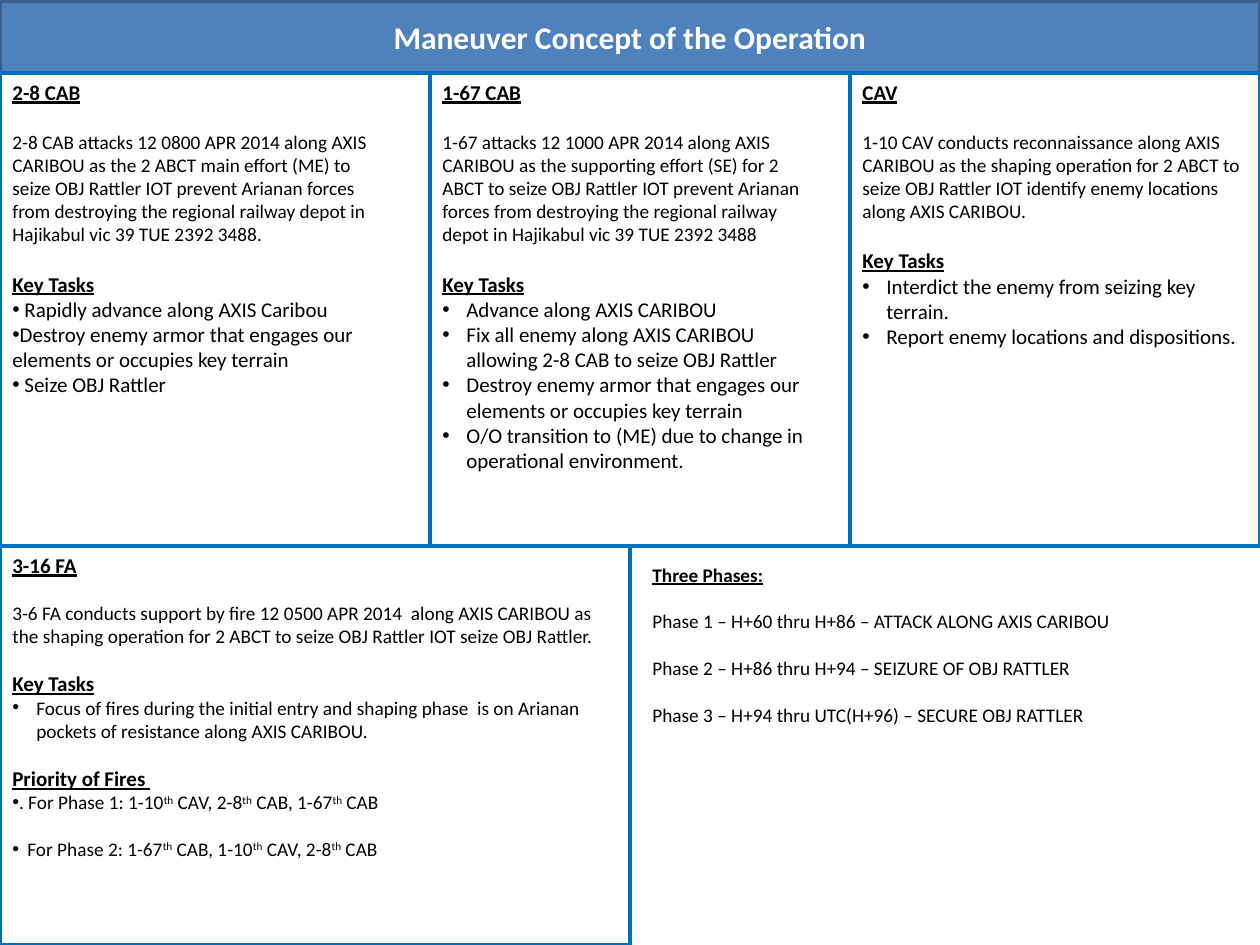
"""Build the maneuver concept slide: a title bar over five unit panels."""
from pptx import Presentation, util as u
from pptx.dml.color import RGBColor
from pptx.enum import shapes, text
from pptx.oxml.ns import qn
from lxml import etree

PX = 914400 / 126
WIDE, HIGH = 1260, 945
TOP, MID = 73, 546

THEME = {
    "font": "Calibri", "bar": "4F81BD", "edge": "3A5F8C", "rule": "0070C0",
    "ink": "000000", "page": "FFFFFF", "title": 18, "large": 12, "small": 11,
    "line": 2, "lead": 1.22,
}

HEAD = {"bold": True, "underline": True}
KINDS = {
    "head": ("large", HEAD, None),
    "sub": ("small", HEAD, None),
    "body": ("small", {}, None),
    "dot": ("large", {}, 0),
    "hang": ("large", {}, 24),
    "dot small": ("small", {}, 0),
    "near small": ("small", {}, 15),
    "hang small": ("small", {}, 24),
}

TITLE = "Maneuver Concept of the Operation"

PANELS = [
    {"box": (850, TOP, 410, MID - TOP), "room": 410, "lines": [
        ("head", None, "CAV"),
        ("body", "large", "1-10 CAV conducts reconnaissance along AXIS CARIBOU as the shaping operation for 2 ABCT to seize OBJ Rattler IOT identify enemy locations along AXIS CARIBOU."),
        ("head", "large", "Key Tasks"),
        ("hang", None, "Interdict the enemy from seizing key terrain."),
        ("hang", None, "Report enemy locations and dispositions."),
    ]},
    {"box": (0, TOP, 430, MID - TOP), "room": 399, "lines": [
        ("head", None, "2-8 CAB"),
        ("body", "large", "2-8 CAB attacks 12 0800 APR 2014 along AXIS CARIBOU as the 2 ABCT main effort (ME) to seize OBJ Rattler IOT prevent Arianan forces from destroying the regional railway depot in Hajikabul vic 39 TUE 2392 3488."),
        ("head", "large", "Key Tasks"),
        ("dot", None, " Rapidly advance along AXIS Caribou"),
        ("dot", None, "Destroy enemy armor that engages our elements or occupies key terrain"),
        ("dot", None, " Seize OBJ Rattler"),
    ]},
    {"box": (430, TOP, 420, MID - TOP), "room": 399, "lines": [
        ("head", None, "1-67 CAB"),
        ("body", "large", "1-67 attacks 12 1000 APR 2014 along AXIS CARIBOU as the supporting effort (SE) for 2 ABCT to seize OBJ Rattler IOT prevent Arianan forces from destroying the regional railway depot in Hajikabul vic 39 TUE 2392 3488"),
        ("head", "large", "Key Tasks"),
        ("hang", None, "Advance along AXIS CARIBOU"),
        ("hang", None, "Fix all enemy along AXIS CARIBOU allowing 2-8 CAB to seize OBJ Rattler"),
        ("hang", None, "Destroy enemy armor that engages our elements or occupies key terrain"),
        ("hang", None, "O/O transition to (ME) due to change in operational environment."),
    ]},
    {"box": (0, MID, 630, HIGH - MID), "room": 620, "lines": [
        ("head", None, "3-16 FA"),
        ("body", "small", "3-6 FA conducts support by fire 12 0500 APR 2014  along AXIS CARIBOU as the shaping operation for 2 ABCT to seize OBJ Rattler IOT seize OBJ Rattler."),
        ("head", "small", "Key Tasks"),
        ("hang small", None, "Focus of fires during the initial entry and shaping phase  is on Arianan pockets of resistance along AXIS CARIBOU."),
        ("head", "small", "Priority of Fires "),
        ("dot small", None, ". For Phase 1: 1-10^th^ CAV, 2-8^th^ CAB, 1-67^th^ CAB"),
        ("near small", "small", "For Phase 2: 1-67^th^ CAB, 1-10^th^ CAV, 2-8^th^ CAB"),
    ]},
    {"box": (640, 557, 620, 305), "room": 620, "open": True, "lines": [
        ("sub", None, "Three Phases:"),
        ("body", "small", "Phase 1 – H+60 thru H+86 – ATTACK ALONG AXIS CARIBOU"),
        ("body", "small", "Phase 2 – H+86 thru H+94 – SEIZURE OF OBJ RATTLER"),
        ("body", "small", "Phase 3 – H+94 thru UTC(H+96) – SECURE OBJ RATTLER"),
    ]},
]


def emu(*sizes):
    return [u.Emu(round(size * PX)) for size in sizes]


def color(name):
    return RGBColor.from_string(THEME[name])


def add_rect(slide, box, fill, line):
    rect = slide.shapes.add_shape(shapes.MSO_SHAPE.RECTANGLE, *emu(*box))
    rect.shadow.inherit = False
    rect.fill.solid()
    rect.fill.fore_color.rgb = color(fill)
    rect.line.color.rgb = color(line)
    rect.line.width = u.Pt(THEME["line"])
    return rect


def add_run(para, words, size, ink, style):
    run = para.add_run()
    run.text = words
    run.font.color.rgb = color(ink)
    look = {"name": THEME["font"], "size": u.Pt(THEME[size]), **style}
    for key, value in look.items():
        setattr(run.font, key, value)
    return run


def add_dot(para, hang):
    props = para._p.get_or_add_pPr()
    step = emu(hang)[0]
    props.set("marL", str(step))
    props.set("indent", str(-step))
    etree.SubElement(props, qn("a:buFont")).set("typeface", "Arial")
    etree.SubElement(props, qn("a:buChar")).set("char", "•")


def add_line(para, kind, gap, words):
    size, style, hang = KINDS[kind]
    if gap:
        para.space_before = u.Pt(round(THEME[gap] * THEME["lead"], 1))
    if hang is not None:
        add_dot(para, hang)
    for spot, part in enumerate(words.split("^")):
        run = add_run(para, part, size, "ink", style)
        if spot % 2:
            run._r.get_or_add_rPr().set("baseline", "30000")


def add_text(slide, panel):
    left, top, _, high = panel["box"]
    frame = slide.shapes.add_textbox(*emu(left, top, panel["room"], high)).text_frame
    frame.word_wrap = True
    for spot, line in enumerate(panel["lines"]):
        para = frame.add_paragraph() if spot else frame.paragraphs[0]
        add_line(para, *line)


def main():
    deck = Presentation()
    deck.slide_width, deck.slide_height = emu(WIDE, HIGH)
    slide = deck.slides.add_slide(deck.slide_layouts[6])

    bar = add_rect(slide, (0, 1, WIDE, TOP - 1), "bar", "edge")
    frame = bar.text_frame
    frame.vertical_anchor = text.MSO_ANCHOR.MIDDLE
    para = frame.paragraphs[0]
    para.alignment = text.PP_ALIGN.CENTER
    add_run(para, TITLE, "title", "page", {"bold": True})

    for panel in PANELS:
        if not panel.get("open"):
            add_rect(slide, panel["box"], "page", "rule")
        add_text(slide, panel)
    deck.save("out.pptx")


if __name__ == "__main__":
    main()
